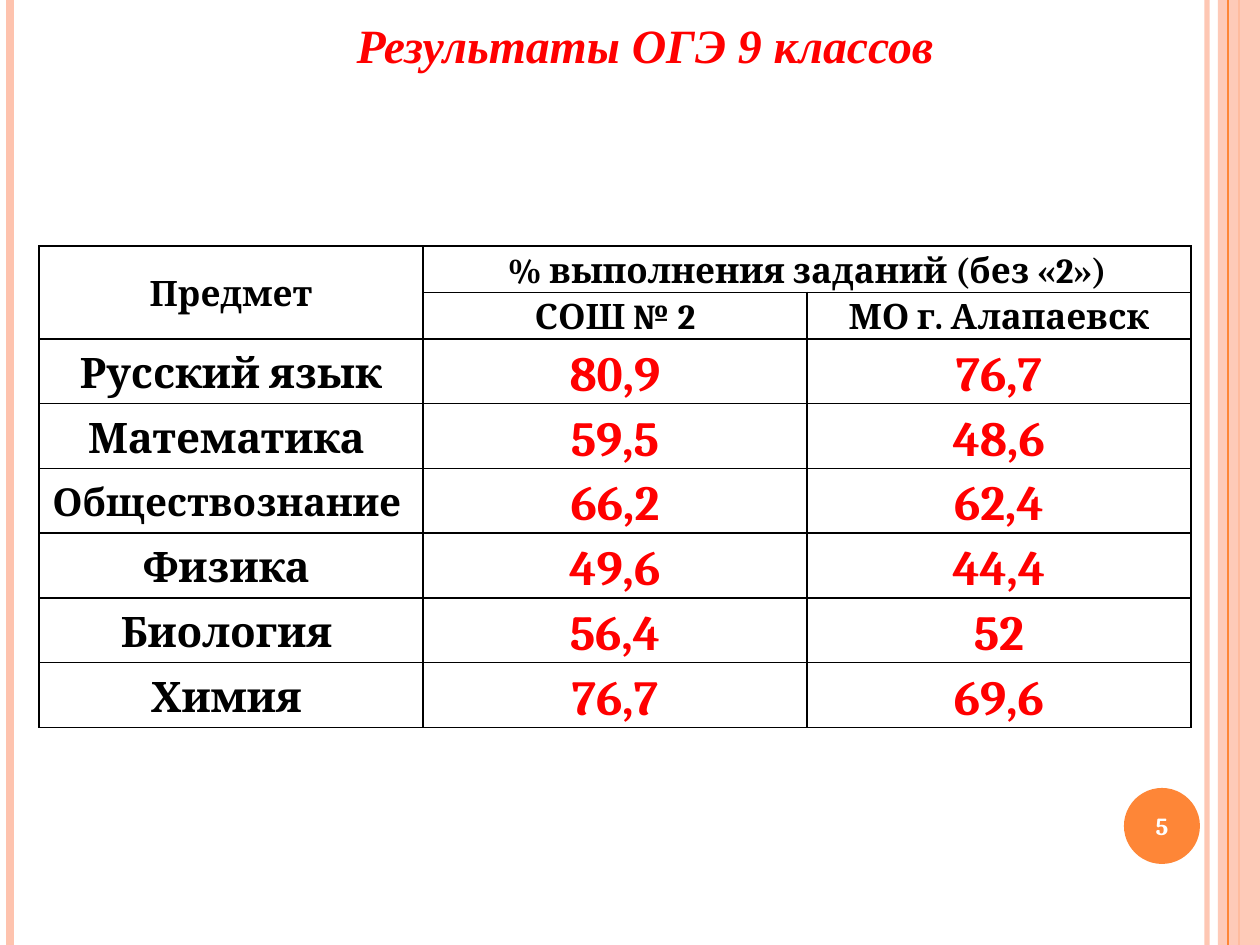
from lxml import etree
from pptx import Presentation
from pptx import util as u
from pptx.dml.color import RGBColor
from pptx.enum import shapes, text
from pptx.oxml import ns

PX_PER_INCH = 126
WIDTH, HEIGHT = 1260, 945
PEACH, ORANGE, RED, BLACK, WHITE = "FEC3AE", "FE8637", "FF0000", "000000", "FFFFFF"
RESULTS = [
    ("Русский язык", "80,9", "76,7"),
    ("Математика ", "59,5", "48,6"),
    ("Обществознание ", "66,2", "62,4"),
    ("Физика ", "49,6", "44,4"),
    ("Биология ", "56,4", "52"),
    ("Химия ", "76,7", "69,6"),
]


def px(length):
    """Turn whole pixels into EMU."""
    return u.Emu(round(length * 914400 / PX_PER_INCH))


def color(hex_string):
    """Turn a hex string into a colour."""
    return RGBColor.from_string(hex_string)


def add_child(parent, tag, **attributes):
    """Append a DrawingML element and return it."""
    return etree.SubElement(parent, ns.qn(f"a:{tag}"), attributes)


def paint(fill, hex_string, opacity=100):
    """Give a fill a solid colour with an optional opacity in percent."""
    fill.solid()
    fill.fore_color.rgb = color(hex_string)
    if opacity < 100:
        for element in fill._xPr.iter(ns.qn("a:srgbClr")):
            add_child(element, "alpha", val=str(opacity * 1000))


def write(frame, words, size, font="Cambria", ink=BLACK, italic=False, spacing=1.0):
    """Write one centred bold line into a text frame."""
    paragraph = frame.paragraphs[0]
    paragraph.alignment = text.PP_ALIGN.CENTER
    paragraph.line_spacing = spacing
    run = paragraph.add_run()
    run.text = words
    run.font.name, run.font.size = font, u.Pt(size)
    run.font.bold, run.font.italic = True, italic
    run.font.color.rgb = color(ink)


def set_margins(target, side):
    """Set the side margins of a cell or text frame and clear the others."""
    target.margin_left = target.margin_right = px(side)
    target.margin_top = target.margin_bottom = 0


def add_stripe(slide, x, width, ink, opacity=100):
    """Draw a full-height vertical line, its width in points."""
    line = slide.shapes.add_connector(
        shapes.MSO_CONNECTOR.STRAIGHT, px(x), 0, px(x), px(HEIGHT))
    line.line.width = u.Pt(width)
    paint(line.line.fill, ink, opacity)
    add_child(line._element.spPr, "effectLst")


def add_block(slide, preset, box, ink, opacity=100):
    """Draw a filled shape without outline and return it."""
    shape = slide.shapes.add_shape(preset, *map(px, box))
    shape.shadow.inherit = False
    paint(shape.fill, ink, opacity)
    shape.line.fill.background()
    return shape


def add_frame(slide):
    """Draw the stripes along both slide edges."""
    add_stripe(slide, 1207, 3, PEACH, 93)
    add_stripe(slide, 10, 4.5, PEACH)
    add_stripe(slide, 1239, 1.5, ORANGE)
    add_block(slide, shapes.MSO_SHAPE.RECTANGLE, (1218, 0, 42, HEIGHT), PEACH, 87)
    add_stripe(slide, 1228, 0.75, ORANGE)


def add_page_number(slide, box, number):
    """Draw the round badge with the slide number."""
    frame = add_block(slide, shapes.MSO_SHAPE.OVAL, box, ORANGE).text_frame
    set_margins(frame, 0)
    frame.vertical_anchor = text.MSO_ANCHOR.MIDDLE
    write(frame, number, 14, ink=WHITE)


def add_title(slide, box, words):
    """Place and format the title placeholder."""
    title = slide.shapes.title
    title.left, title.top, title.width, title.height = map(px, box)
    frame = title.text_frame
    frame.word_wrap = True
    frame.auto_size = text.MSO_AUTO_SIZE.NONE
    frame.vertical_anchor = text.MSO_ANCHOR.TOP
    write(frame, words, 27.3, font="Times New Roman", ink=RED, italic=True, spacing=0.8)


def format_cell(cell):
    """Give a cell thin black borders, no fill and tight margins."""
    set_margins(cell, 8)
    cell.vertical_anchor = text.MSO_ANCHOR.MIDDLE
    properties = cell._tc.get_or_add_tcPr()
    for side in ("lnL", "lnR", "lnT", "lnB"):
        border = add_child(properties, side, w=str(u.Pt(1)))
        add_child(add_child(border, "solidFill"), "srgbClr", val=BLACK)
    cell.fill.background()


def add_results(slide, box, header_height, row_height):
    """Build the table of exam results under a two-row header."""
    rows = [("Предмет", "% выполнения заданий (без «2»)", ""),
            ("", "СОШ № 2", "МО г. Алапаевск")] + RESULTS
    table = slide.shapes.add_table(len(rows), 3, *map(px, box)).table
    table.first_row = table.horz_banding = False
    for column in table.columns:
        column.width = px(box[2] // 3)
    for i, row in enumerate(rows):
        table.rows[i].height = px(header_height if i < 2 else row_height)
        for j, words in enumerate(row):
            cell = table.cell(i, j)
            format_cell(cell)
            if not words:
                continue
            if i < 2:
                size, ink = 20, BLACK
            elif j:
                size, ink = 28, RED
            else:
                size, ink = (22 if len(words) > 12 else 24), BLACK
            write(cell.text_frame, words, size, ink=ink, spacing=1.15)
    table.cell(0, 0).merge(table.cell(1, 0))
    table.cell(0, 1).merge(table.cell(0, 2))


def main():
    """Build the slide and save it."""
    presentation = Presentation()
    presentation.slide_width, presentation.slide_height = px(WIDTH), px(HEIGHT)
    slide = presentation.slides.add_slide(presentation.slide_layouts[5])
    paint(slide.background.fill, WHITE)
    add_frame(slide)
    add_page_number(slide, (1124, 788, 76, 76), "5")
    add_results(slide, (39, 246, 1152, 482), 46, 64)
    add_title(slide, (108, 20, 1074, 59), "Результаты ОГЭ 9 классов")
    presentation.save("out.pptx")


if __name__ == "__main__":
    main()
